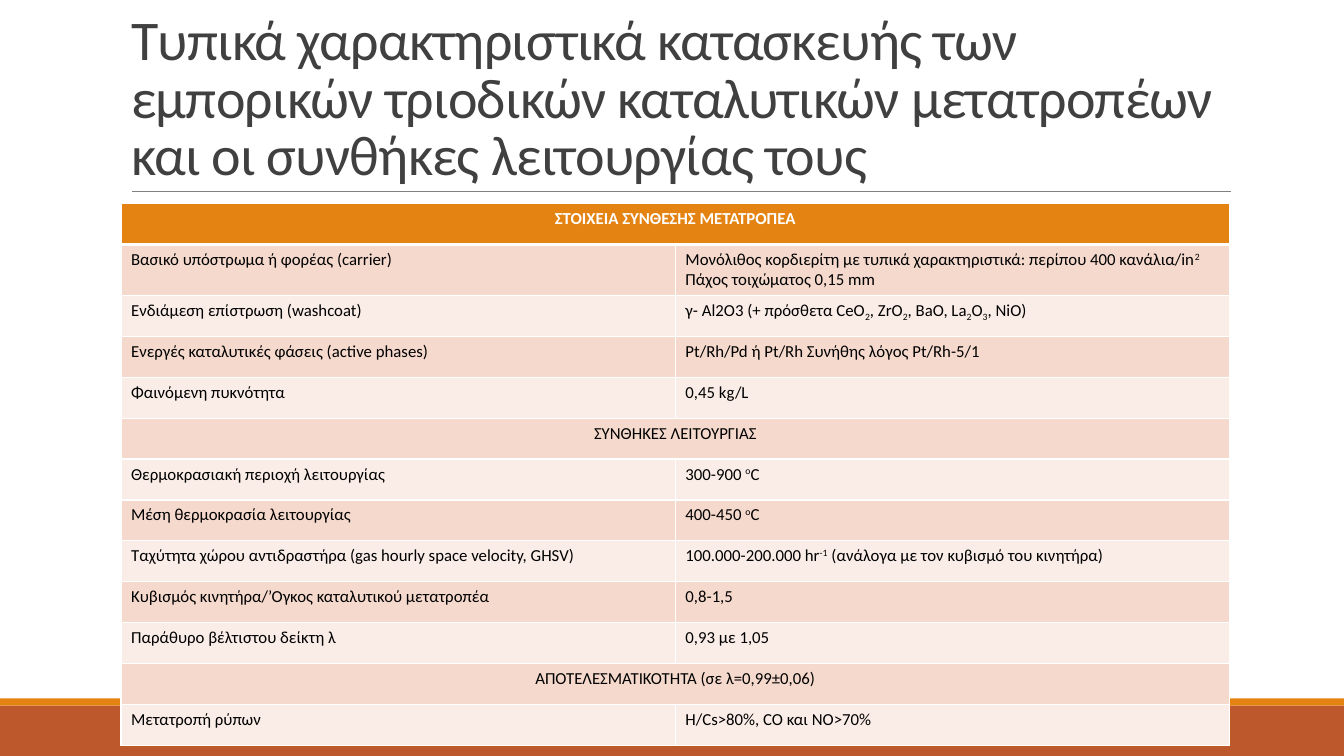
"""Build a slide with a table of catalytic converter features."""
from dataclasses import dataclass

from lxml import etree
from pptx import Presentation
from pptx.dml.color import RGBColor
from pptx.enum.shapes import MSO_CONNECTOR, MSO_SHAPE
from pptx.enum.text import MSO_ANCHOR, MSO_AUTO_SIZE, PP_ALIGN
from pptx.oxml.ns import qn
from pptx.slide import Slide
from pptx.table import Table, _Cell
from pptx.text.text import _Paragraph
from pptx.util import Cm, Pt

LEFT, CENTER = PP_ALIGN.LEFT, PP_ALIGN.CENTER
BOTTOM, TOP = MSO_ANCHOR.BOTTOM, MSO_ANCHOR.TOP
NO_FIT = MSO_AUTO_SIZE.NONE
RECT, STRAIGHT = MSO_SHAPE.RECTANGLE, MSO_CONNECTOR.STRAIGHT

FONT = "Calibri"
COLORS = {
    "rust": "BD582C",
    "orange": "E48312",
    "rule": "808080",
    "title": "404040",
    "white": "FFFFFF",
    "black": "000000",
    "dark": "F5D9CC",
    "light": "FAEDE7",
}
WIDE, HIGH = 33.87, 19.05
EDGE, SPAN = 3.05, 27.94
ROW_HIGH = 1.03
SUPER, SUB = 30, -25
TITLE = (
    "Τυπικά χαρακτηριστικά κατασκευής των εμπορικών τριοδικών "
    "καταλυτικών μετατροπέων και οι συνθήκες λειτουργίας τους"
)


@dataclass(frozen=True)
class Bit:
    """Text with a baseline shift in percent."""

    text: str
    shift: int = 0


@dataclass(frozen=True)
class Line:
    """One table row; without values it spans both columns."""

    label: str
    values: tuple[tuple[Bit, ...], ...] = ()


@dataclass(frozen=True)
class Bar:
    """A full-width band at the foot of the slide."""

    top: float
    high: float
    color: str


BARS = (Bar(17.78, 1.27, "rust"), Bar(17.6, 0.18, "orange"))
DEGREE = (Bit("ο", SUPER), Bit("C"))
TWO = Bit("2", SUB)
LINES = (
    Line("ΣΤΟΙΧΕΙΑ ΣΥΝΘΕΣΗΣ ΜΕΤΑΤΡΟΠΕΑ"),
    Line("Βασικό υπόστρωμα ή φορέας (carrier)", (
        (Bit("Μονόλιθος κορδιερίτη με τυπικά χαρακτηριστικά: περίπου 400 κανάλια/in"),
         Bit("2", SUPER)),
        (Bit("Πάχος τοιχώματος 0,15 mm"),),
    )),
    Line("Ενδιάμεση επίστρωση (washcoat)", (
        (Bit("γ- Al2O3 (+ πρόσθετα CeO"), TWO, Bit(", ZrO"), TWO,
         Bit(", BaO, La"), TWO, Bit("O"), Bit("3", SUB), Bit(", NiO)")),
    )),
    Line("Ενεργές καταλυτικές φάσεις (active phases)",
         ((Bit("Pt/Rh/Pd ή Pt/Rh Συνήθης λόγος Pt/Rh-5/1"),),)),
    Line("Φαινόμενη πυκνότητα", ((Bit("0,45 kg/L"),),)),
    Line("ΣΥΝΘΗΚΕΣ ΛΕΙΤΟΥΡΓΙΑΣ"),
    Line("Θερμοκρασιακή περιοχή λειτουργίας", ((Bit("300-900 "), *DEGREE),)),
    Line("Μέση θερμοκρασία λειτουργίας", ((Bit("400-450 "), *DEGREE),)),
    Line("Ταχύτητα χώρου αντιδραστήρα (gas hourly space velocity, GHSV)", (
        (Bit("100.000-200.000 hr"), Bit("-1", SUPER),
         Bit(" (ανάλογα με τον κυβισμό του κινητήρα)")),
    )),
    Line("Κυβισμός κινητήρα/’Ογκος καταλυτικού μετατροπέα", ((Bit("0,8-1,5"),),)),
    Line("Παράθυρο βέλτιστου δείκτη λ", ((Bit("0,93 με 1,05"),),)),
    Line("ΑΠΟΤΕΛΕΣΜΑΤΙΚΟΤΗΤΑ (σε λ=0,99±0,06)"),
    Line("Μετατροπή ρύπων", ((Bit("H/Cs>80%, CO και NO>70%"),),)),
)


def paint(name: str) -> RGBColor:
    """Return a named colour."""
    return RGBColor.from_string(COLORS[name])


def add_bit(para: _Paragraph, bit: Bit, size: float, color: str, bold: bool = False) -> None:
    """Add one run to a paragraph."""
    run = para.add_run()
    run.text = bit.text
    font = run.font
    font.name, font.size, font.bold = FONT, Pt(size), bold
    font.color.rgb = paint(color)
    if bit.shift:
        run._r.get_or_add_rPr().set("baseline", str(bit.shift * 1000))


def add_bar(slide: Slide, bar: Bar) -> None:
    """Draw one band."""
    shape = slide.shapes.add_shape(RECT, 0, Cm(bar.top), Cm(WIDE), Cm(bar.high))
    shape.shadow.inherit = False
    shape.fill.solid()
    shape.fill.fore_color.rgb = paint(bar.color)
    shape.line.fill.background()


def add_rule(slide: Slide) -> None:
    """Draw the thin line below the title."""
    rule = slide.shapes.add_connector(STRAIGHT, Cm(3.33), Cm(4.82), Cm(31.01), Cm(4.82))
    rule.line.color.rgb = paint("rule")
    rule.line.width = Pt(0.5)
    etree.SubElement(rule._element.spPr, qn("a:effectLst"))


def set_title(slide: Slide) -> None:
    """Place and fill the title."""
    title = slide.shapes.title
    title.left, title.top = Cm(EDGE), Cm(0.79)
    title.width, title.height = Cm(SPAN), Cm(4.04)
    frame = title.text_frame
    frame.word_wrap, frame.auto_size = True, NO_FIT
    frame.vertical_anchor = BOTTOM
    para = frame.paragraphs[0]
    para.alignment, para.line_spacing = LEFT, 0.85
    add_bit(para, Bit(TITLE), 40, "title")
    para.runs[0]._r.get_or_add_rPr().set("spc", "-50")


def set_edges(cell: _Cell, row: int) -> None:
    """Give a cell white borders, thick below the first row."""
    props = cell._tc.get_or_add_tcPr()
    widths = {"L": 1, "R": 1, "T": 3 if row == 1 else 1, "B": 3 if row == 0 else 1}
    for spot, (side, width) in enumerate(widths.items()):
        edge = etree.Element(qn(f"a:ln{side}"), w=str(Pt(width)))
        fill = etree.SubElement(edge, qn("a:solidFill"))
        etree.SubElement(fill, qn("a:srgbClr"), val=COLORS["white"])
        props.insert(spot, edge)


def fill_row(table: Table, row: int, line: Line) -> None:
    """Format and fill one table row."""
    head = row == 0
    back = "orange" if head else "dark" if row % 2 else "light"
    cells = [table.cell(row, col) for col in range(2)]
    for cell in cells:
        cell.fill.solid()
        cell.fill.fore_color.rgb = paint(back)
        cell.vertical_anchor = TOP
        set_edges(cell, row)
    if not line.values:
        cells[0].merge(cells[1])
    for cell, paras in zip(cells, (((Bit(line.label),),), line.values)):
        frame = cell.text_frame
        for spot, bits in enumerate(paras):
            para = frame.add_paragraph() if spot else frame.paragraphs[0]
            para.alignment = LEFT if line.values else CENTER
            for bit in bits:
                add_bit(para, bit, 12, "white" if head else "black", head)


def add_grid(slide: Slide) -> None:
    """Add the table of features."""
    count = len(LINES)
    table = slide.shapes.add_table(
        count, 2, Cm(EDGE), Cm(5.13), Cm(SPAN), Cm(ROW_HIGH * count)
    ).table
    for row, line in enumerate(LINES):
        table.rows[row].height = Cm(ROW_HIGH)
        fill_row(table, row, line)


def main() -> None:
    """Build and save the slide."""
    deck = Presentation()
    deck.slide_width, deck.slide_height = Cm(WIDE), Cm(HIGH)
    slide = deck.slides.add_slide(deck.slide_layouts[5])
    for bar in BARS:
        add_bar(slide, bar)
    add_rule(slide)
    set_title(slide)
    add_grid(slide)
    deck.save("out.pptx")


if __name__ == "__main__":
    main()
